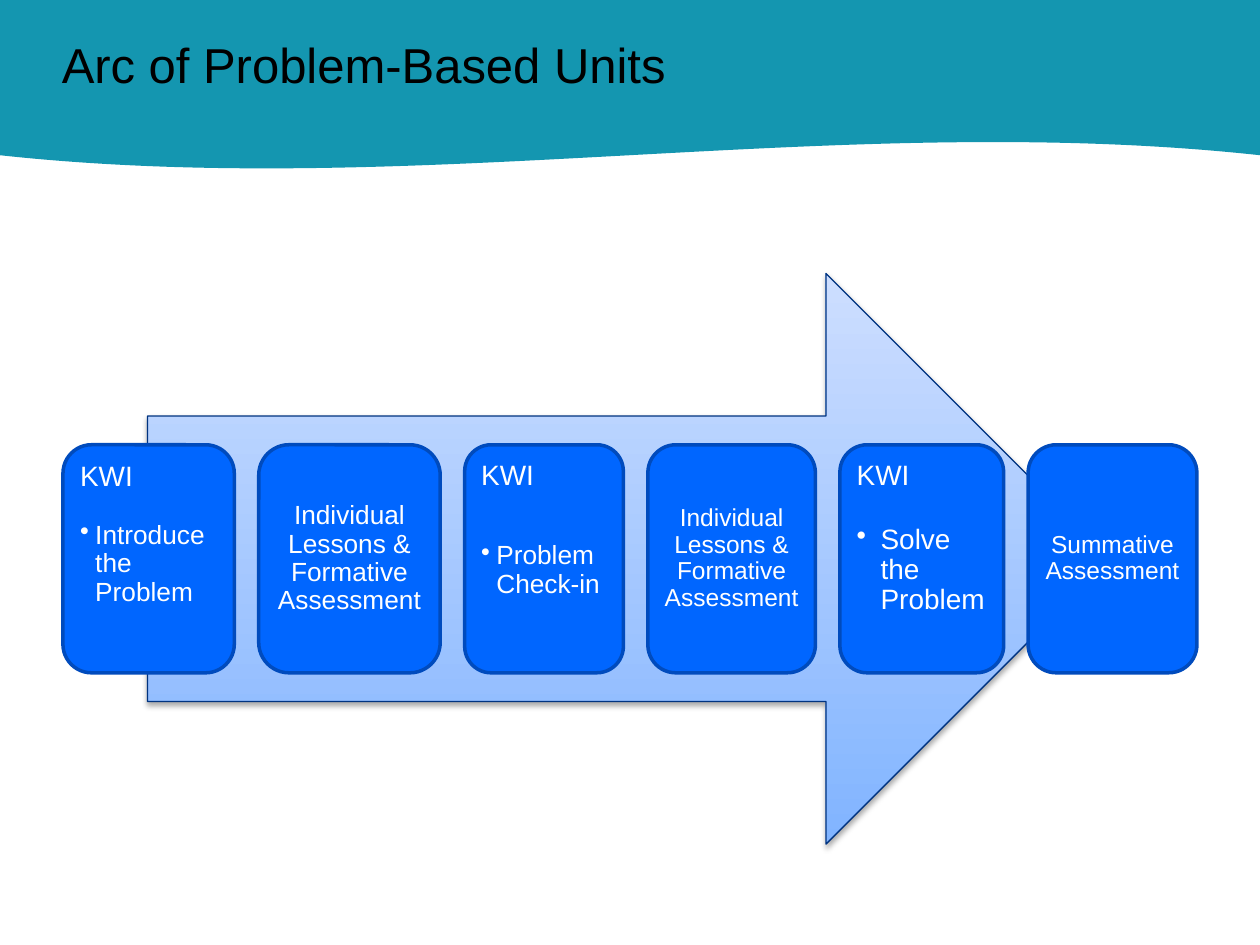
from lxml.etree import SubElement
from pptx import Presentation
from pptx.dml.color import RGBColor
from pptx.enum.shapes import MSO_SHAPE
from pptx.enum.text import MSO_ANCHOR, MSO_AUTO_SIZE, PP_ALIGN
from pptx.oxml.ns import qn
from pptx.util import Inches, Pt

TEAL = RGBColor(0x14, 0x96, 0xB0)
BLUE = RGBColor(0x00, 0x66, 0xFF)
BLUE_EDGE = RGBColor(0x00, 0x4B, 0xBD)
NAVY = RGBColor(0x00, 0x33, 0x80)
ARROW_LOW = RGBColor(0x81, 0xB4, 0xFF)
ARROW_HIGH = RGBColor(0xCD, 0xDE, 0xFF)
BLACK = RGBColor(0x00, 0x00, 0x00)
WHITE = RGBColor(0xFF, 0xFF, 0xFF)


class ArcSlide:
    font = "Arial"
    line_spacing = 0.9

    def __init__(self, presentation):
        self.slide = presentation.slides.add_slide(presentation.slide_layouts[5])

    def shape(self, kind, left, top, width, height):
        shape = self.slide.shapes.add_shape(
            kind, Inches(left), Inches(top), Inches(width), Inches(height))
        shape.shadow.inherit = False
        return shape

    def run(self, paragraph, text, size, color):
        run = paragraph.add_run()
        run.text = text
        run.font.name = self.font
        run.font.size = Pt(size)
        run.font.color.rgb = color

    def insets(self, frame, inset):
        frame.margin_left = frame.margin_right = Inches(inset)
        frame.margin_top = frame.margin_bottom = Inches(inset)

    def title(self, text):
        title = self.slide.shapes.title
        title.left, title.top = Inches(0.39), Inches(0.11)
        title.width, title.height = Inches(8.17), Inches(0.8)
        frame = title.text_frame
        frame.word_wrap = True
        frame.auto_size = MSO_AUTO_SIZE.NONE
        frame.vertical_anchor = MSO_ANCHOR.MIDDLE
        self.insets(frame, 0.1)
        frame.paragraphs[0].alignment = PP_ALIGN.LEFT
        self.run(frame.paragraphs[0], text, 28, BLACK)

    def header_wave(self):
        wave = self.shape(MSO_SHAPE.WAVE, 0, -0.33, 10, 1.67)
        wave.adjustments[0] = 0.065
        wave.adjustments[1] = 0
        wave.rotation = 180
        wave.element.spPr.find(qn("a:xfrm")).set("flipH", "1")
        wave.fill.solid()
        wave.fill.fore_color.rgb = TEAL
        wave.line.fill.background()
        # The band lies behind the title
        self.slide.shapes.title.element.addprevious(wave.element)

    def arrow(self, left, top, width, height):
        arrow = self.shape(MSO_SHAPE.RIGHT_ARROW, left, top, width, height)
        arrow.fill.gradient()
        arrow.fill.gradient_angle = 90
        for stop, color in zip(arrow.fill.gradient_stops, (ARROW_LOW, ARROW_HIGH)):
            stop.color.rgb = color
        arrow.line.color.rgb = NAVY
        arrow.line.width = Pt(0.75)
        # Soft shadow below the arrow
        effects = arrow.element.spPr.find(qn("a:effectLst"))
        shadow = SubElement(effects, qn("a:outerShdw"), blurRad=str(Pt(3.1)),
                            dist=str(Pt(1.8)), dir="5400000", rotWithShape="0")
        shade = SubElement(shadow, qn("a:srgbClr"), val="000000")
        SubElement(shade, qn("a:alpha"), val="35000")

    def stage(self, left, width, inset):
        box = self.shape(MSO_SHAPE.ROUNDED_RECTANGLE, left, 3.53, width, 1.81)
        box.fill.solid()
        box.fill.fore_color.rgb = BLUE
        box.line.color.rgb = BLUE_EDGE
        box.line.width = Pt(2)
        frame = box.text_frame
        frame.word_wrap = True
        self.insets(frame, inset)
        return frame

    def lesson_stage(self, left, width, text, size):
        frame = self.stage(left, width, 0.06)
        frame.vertical_anchor = MSO_ANCHOR.MIDDLE
        paragraph = frame.paragraphs[0]
        paragraph.alignment = PP_ALIGN.CENTER
        paragraph.line_spacing = self.line_spacing
        self.run(paragraph, text, size, WHITE)

    def kwi_stage(self, left, width, text, size, indent, gap):
        frame = self.stage(left, width, 0.07)
        frame.vertical_anchor = MSO_ANCHOR.TOP
        heading, step = frame.paragraphs[0], frame.add_paragraph()
        for paragraph in (heading, step):
            paragraph.alignment = PP_ALIGN.LEFT
            paragraph.line_spacing = self.line_spacing
        self.run(heading, "KWI", 16, WHITE)
        step.level = 1
        step.space_before = Pt(gap)
        properties = step._p.get_or_add_pPr()
        properties.set("marL", str(Inches(indent)))
        properties.set("indent", str(-Inches(indent)))
        SubElement(properties, qn("a:buChar"), char="•")
        self.run(step, text, size, WHITE)


def main():
    presentation = Presentation()
    presentation.slide_width, presentation.slide_height = Inches(10), Inches(7.5)
    arc = ArcSlide(presentation)

    # Header
    arc.header_wave()
    arc.title("Arc of Problem-Based Units")

    # Arrow behind the stages
    arc.arrow(1.17, 2.17, 7.65, 4.53)

    # Stages of a unit, spread with equal gaps between the margins
    lessons = "Individual Lessons & Formative Assessment"
    stages = [
        (1.36, arc.kwi_stage, ("Introduce the Problem", 15, 0.12, 17)),
        (1.44, arc.lesson_stage, (lessons, 15)),
        (1.26, arc.kwi_stage, ("Problem Check-in", 15, 0.12, 29)),
        (1.33, arc.lesson_stage, (lessons, 14)),
        (1.3, arc.kwi_stage, ("Solve the Problem", 16, 0.19, 19)),
        (1.34, arc.lesson_stage, ("Summative Assessment", 14)),
    ]
    left, right = 0.5, 9.5
    gap = (right - left - sum(width for width, _, _ in stages)) / (len(stages) - 1)
    for width, add_stage, content in stages:
        add_stage(left, width, *content)
        left += width + gap

    presentation.save("out.pptx")


if __name__ == "__main__":
    main()
